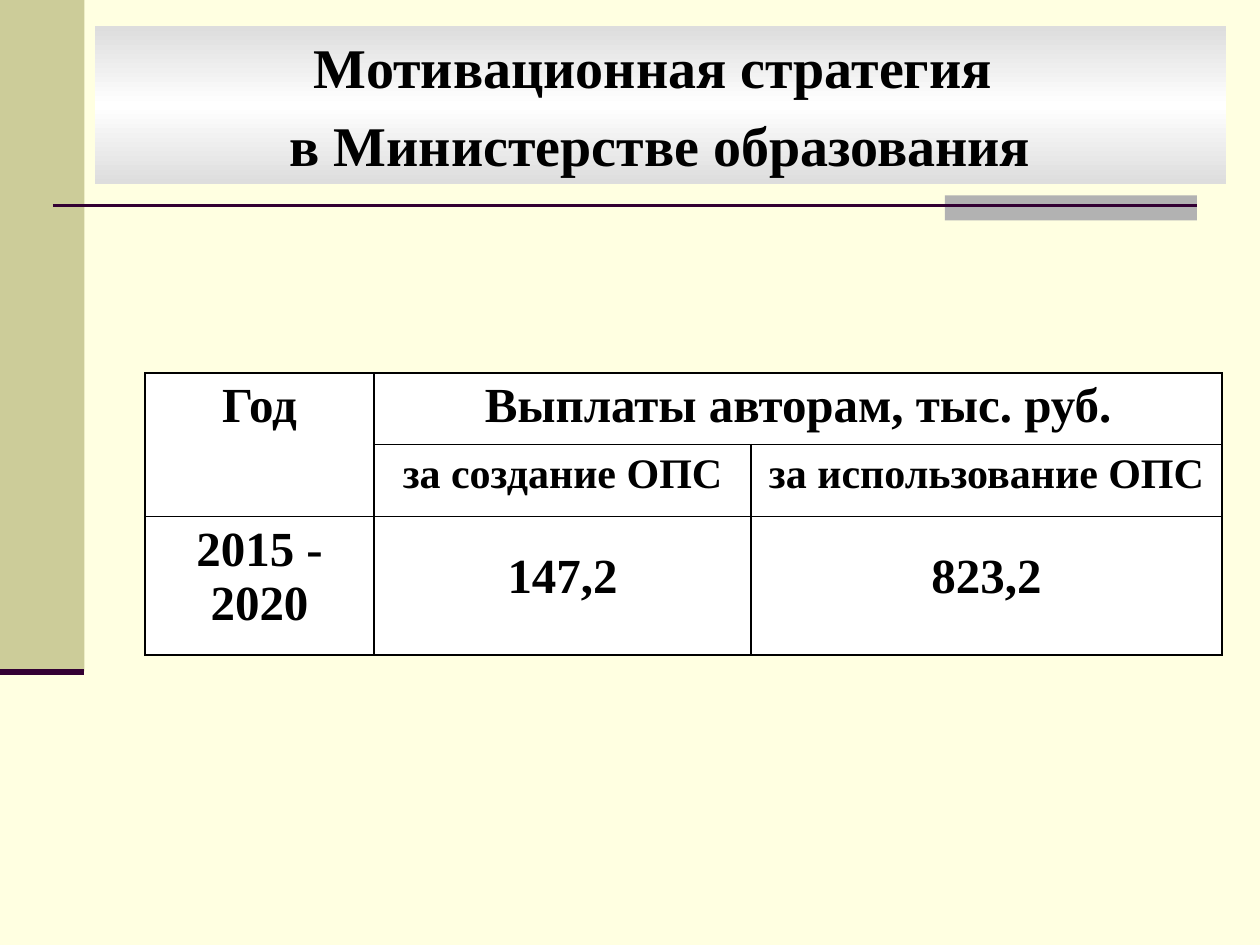
import lxml.etree
import pptx
import pptx.dml.color
import pptx.enum.shapes
import pptx.enum.text
import pptx.oxml
import pptx.oxml.ns
import pptx.util

Inches = pptx.util.Inches
Pt = pptx.util.Pt
qn = pptx.oxml.ns.qn
RECTANGLE = pptx.enum.shapes.MSO_SHAPE.RECTANGLE
NS = 'xmlns:a="http://schemas.openxmlformats.org/drawingml/2006/main"'


def color(hex_value):
    return pptx.dml.color.RGBColor.from_string(hex_value)


def write(frame, text, size=28, line_spacing=None, space_before=None):
    """Fill a text frame with centred bold paragraphs, one per line of text."""
    for number, line in enumerate(text.split("\n")):
        paragraph = frame.add_paragraph() if number else frame.paragraphs[0]
        paragraph.alignment = pptx.enum.text.PP_ALIGN.CENTER
        paragraph.line_spacing = line_spacing
        paragraph.space_before = space_before
        run = paragraph.add_run()
        run.text = line
        run.font.name = "Times New Roman"
        run.font.size = Pt(size)
        run.font.bold = True
        run.font.color.rgb = color("000000")


presentation = pptx.Presentation()
presentation.slide_width = Inches(10)
presentation.slide_height = Inches(7.5)
slide = presentation.slides.add_slide(presentation.slide_layouts[6])
slide.background.fill.solid()
slide.background.fill.fore_color.rgb = color("FFFFE1")

# Side band and accent block
for left, top, width, height, fill in [
    (0, 0, 0.67, 5.33, "CCCC99"),
    (7.5, 1.55, 2, 0.2, "B2B2B2"),
]:
    block = slide.shapes.add_shape(
        RECTANGLE, Inches(left), Inches(top), Inches(width), Inches(height))
    block.shadow.inherit = False
    block.fill.solid()
    block.fill.fore_color.rgb = color(fill)
    block.line.fill.background()

# Rules under the title and under the side band
for left, right, y, weight in [(0.42, 9.5, 1.63, 1.5), (0, 0.67, 5.33, 3.5)]:
    rule = slide.shapes.add_connector(
        pptx.enum.shapes.MSO_CONNECTOR.STRAIGHT,
        Inches(left), Inches(y), Inches(right), Inches(y))
    rule.line.color.rgb = color("330033")
    rule.line.width = Pt(weight)
    lxml.etree.SubElement(rule._element.spPr, qn("a:effectLst"))

# Payments table
column_widths = [1.82, 2.99, 3.74]
row_heights = [0.57, 0.57, 1.1]
payments = slide.shapes.add_table(
    3, 3, Inches(1.15), Inches(2.96),
    Inches(sum(column_widths)), Inches(sum(row_heights))).table
for column, width in zip(payments.columns, column_widths):
    column.width = Inches(width)
for row, height in zip(payments.rows, row_heights):
    row.height = Inches(height)

for cell in payments.iter_cells():
    cell.fill.solid()
    cell.fill.fore_color.rgb = color("FFFFFF")
    properties = cell._tc.get_or_add_tcPr()
    for position, side in enumerate(["lnL", "lnR", "lnT", "lnB"]):
        properties.insert(position, pptx.oxml.parse_xml(
            f'<a:{side} {NS} w="{Pt(1)}"><a:solidFill><a:srgbClr val="000000"/>'
            f'</a:solidFill></a:{side}>'))

payments.cell(0, 0).merge(payments.cell(1, 0))
payments.cell(0, 1).merge(payments.cell(0, 2))
for row, column, text, text_format in [
    (0, 0, "Год", {}),
    (0, 1, "Выплаты авторам, тыс. руб.", {}),
    (1, 1, "за создание ОПС", {"size": 24}),
    (1, 2, "за использование ОПС", {"size": 24}),
    (2, 0, "2015 - 2020", {}),
    (2, 1, "147,2", {"line_spacing": 1.5}),
    (2, 2, "823,2", {"line_spacing": 1.5}),
]:
    write(payments.cell(row, column).text_frame, text, **text_format)

# Title banner with a light centre
title = slide.shapes.add_shape(
    RECTANGLE, Inches(0.75), Inches(0.21), Inches(8.98), Inches(1.25))
title.shadow.inherit = False
title.line.fill.background()
title.fill.gradient()
title.fill.gradient_angle = 270
stops = title._element.spPr.find(qn("a:gradFill")).find(qn("a:gsLst"))
for stop in list(stops):
    stops.remove(stop)
for percent, shade in [(0, "DDDDDD"), (50, "FFFFFF"), (100, "DDDDDD")]:
    stops.append(pptx.oxml.parse_xml(
        f'<a:gs {NS} pos="{percent * 1000}"><a:srgbClr val="{shade}"/></a:gs>'))
title.text_frame.word_wrap = True
title.text_frame.vertical_anchor = pptx.enum.text.MSO_ANCHOR.MIDDLE
write(title.text_frame, "Мотивационная стратегия \nв Министерстве образования",
      size=32, space_before=Pt(6.4))

presentation.save("out.pptx")
